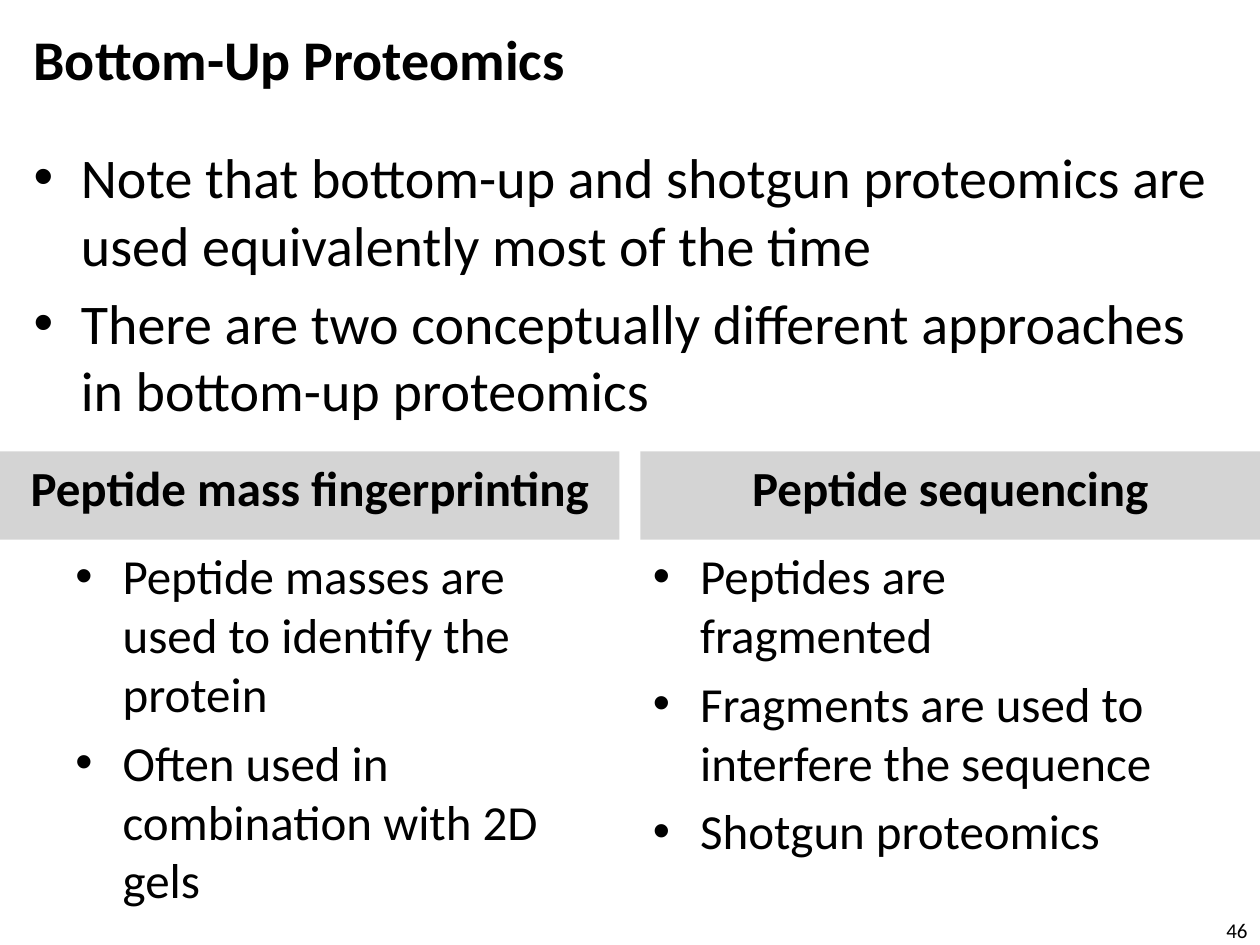
import lxml.etree
import pptx
import pptx.dml.color
import pptx.enum.shapes
import pptx.enum.text
import pptx.oxml.ns
import pptx.util

BLACK = pptx.dml.color.RGBColor(0x00, 0x00, 0x00)
GREY = pptx.dml.color.RGBColor(0xD4, 0xD4, 0xD4)
ALIGN = pptx.enum.text.PP_ALIGN
ANCHOR = pptx.enum.text.MSO_ANCHOR
GRID_COLUMNS = 120
GRID_ROWS = 90


def write_text(shape, lines, size, bold=False, align=ALIGN.LEFT, anchor=ANCHOR.TOP, indent=None):
    frame = shape.text_frame
    frame.word_wrap = True
    frame.auto_size = pptx.enum.text.MSO_AUTO_SIZE.NONE
    frame.vertical_anchor = anchor
    for index, line in enumerate(lines):
        paragraph = frame.add_paragraph() if index else frame.paragraphs[0]
        paragraph.alignment = align
        paragraph.space_before = pptx.util.Pt(size * 0.2 if index else 0)
        if indent is not None:
            properties = paragraph._p.get_or_add_pPr()
            properties.set("marL", str(indent))
            properties.set("indent", str(-indent))
            for tag, attribute, value in (("a:buFont", "typeface", "Arial"), ("a:buChar", "char", "•")):
                element = lxml.etree.SubElement(properties, pptx.oxml.ns.qn(tag))
                element.set(attribute, value)
        run = paragraph.add_run()
        run.text = line
        run.font.name = "Calibri"
        run.font.size = pptx.util.Pt(size)
        run.font.bold = bold
        run.font.color.rgb = BLACK


class SlideBuilder:
    def __init__(self, presentation):
        self.column = presentation.slide_width / GRID_COLUMNS
        self.row = presentation.slide_height / GRID_ROWS
        self.indent = int(4.5 * self.column)
        self.slide = presentation.slides.add_slide(presentation.slide_layouts[1])

    def box(self, left, top, width, height):
        return [int(left * self.column), int(top * self.row),
                int(width * self.column), int(height * self.row)]

    def place(self, shape, *cells):
        shape.left, shape.top, shape.width, shape.height = self.box(*cells)
        return shape

    def title(self, text, *cells):
        shape = self.place(self.slide.shapes.title, *cells)
        write_text(shape, [text], 32, bold=True, anchor=ANCHOR.MIDDLE)

    def body(self, lines, *cells):
        shape = self.place(self.slide.placeholders[1], *cells)
        write_text(shape, lines, 32, indent=self.indent)

    def header(self, text, *cells):
        shape = self.slide.shapes.add_shape(
            pptx.enum.shapes.MSO_SHAPE.RECTANGLE, *self.box(*cells))
        shape.shadow.inherit = False
        shape.fill.solid()
        shape.fill.fore_color.rgb = GREY
        shape.line.fill.background()
        write_text(shape, [text], 28, bold=True, align=ALIGN.CENTER)

    def bullets(self, lines, *cells):
        shape = self.slide.shapes.add_textbox(*self.box(*cells))
        write_text(shape, lines, 28, indent=self.indent)

    def page_number(self, text, *cells):
        shape = self.slide.shapes.add_textbox(*self.box(*cells))
        write_text(shape, [text], 12, align=ALIGN.RIGHT, anchor=ANCHOR.MIDDLE)


def main():
    presentation = pptx.Presentation()
    presentation.slide_width = pptx.util.Inches(10)
    presentation.slide_height = pptx.util.Inches(7.5)
    builder = SlideBuilder(presentation)

    builder.title("Bottom-Up Proteomics", 2, 1, 88, 9)
    builder.body([
        "Note that bottom-up and shotgun proteomics are used equivalently most of the time",
        "There are two conceptually different approaches in bottom-up proteomics",
    ], 2, 13, 116, 71)

    approaches = [
        (0, 6, "Peptide mass fingerprinting", [
            "Peptide masses are used to identify the protein",
            "Often used in combination with 2D gels",
        ]),
        (61, 61, "Peptide sequencing", [
            "Peptides are fragmented",
            "Fragments are used to interfere the sequence",
            "Shotgun proteomics",
        ]),
    ]
    header_top, header_height = 43, 8.4
    for header_left, list_left, heading, points in approaches:
        builder.header(heading, header_left, header_top, 59, header_height)
        builder.bullets(points, list_left, header_top + header_height, 53, 60)

    builder.page_number("46", 90, 87.25, 30, 2.75)
    presentation.save("out.pptx")


if __name__ == "__main__":
    main()
